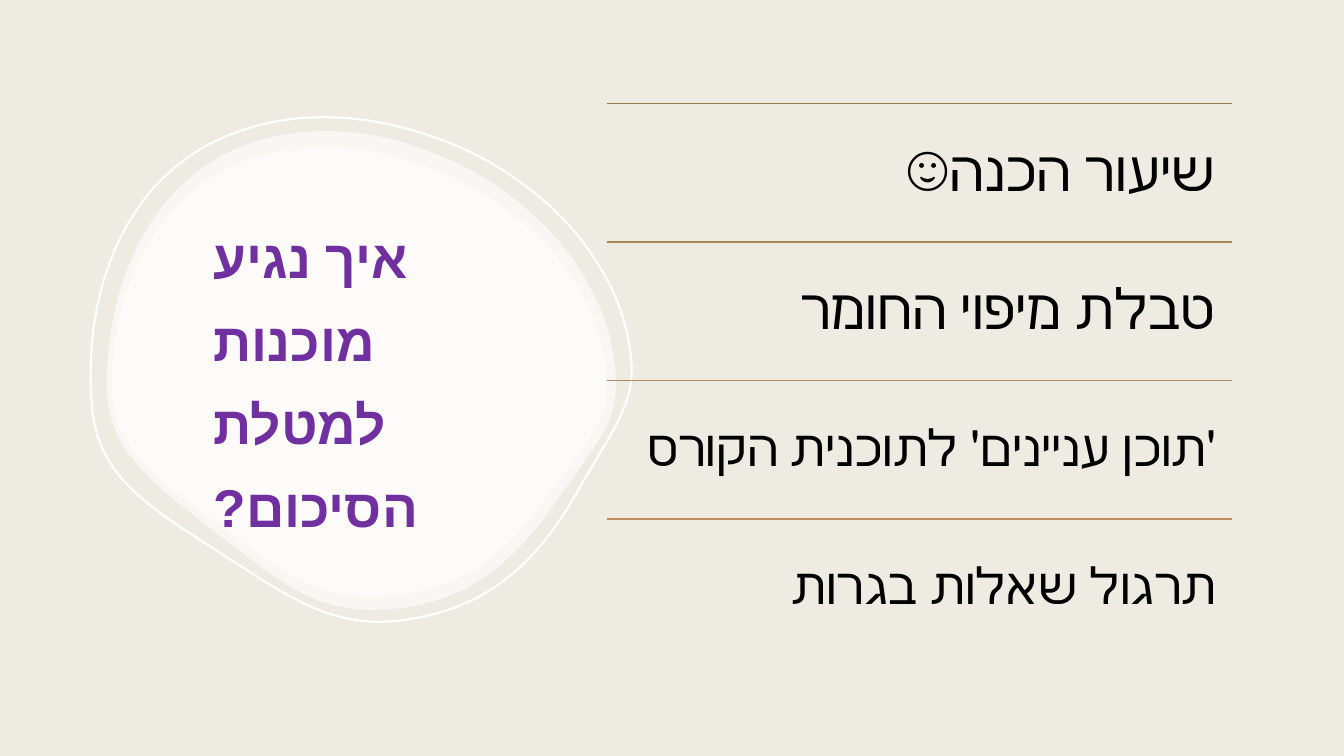
"""Build a Hebrew slide: a question on a white pebble beside four ruled topics."""
from lxml import etree
from pptx import Presentation
from pptx import util as u
from pptx.dml.color import RGBColor
from pptx.enum import shapes, text
from pptx.oxml.ns import qn

COLORS = {"background": "EEEBE2", "pebble": "FFFFFF", "question": "7030A0", "topic": "000000"}
OUTLINE_WIDTH, OUTLINE_HEIGHT = 505, 475
OUTLINE_START = (216, 0)
OUTLINE_CURVES = [
    ((183, 0), (152, 7), (125, 19)),
    ((100, 31), (77, 48), (59, 70)),
    ((21, 116), (0, 180), (0, 252)),
    ((0, 280), (8, 303), (26, 326)),
    ((45, 350), (74, 372), (104, 395)),
    ((109, 399), (115, 404), (121, 408)),
    ((172, 449), (210, 475), (261, 475)),
    ((339, 475), (395, 443), (446, 367)),
    ((453, 357), (460, 348), (466, 339)),
    ((492, 303), (505, 284), (505, 252)),
    ((505, 220), (497, 188), (481, 158)),
    ((466, 128), (444, 101), (416, 77)),
    ((389, 53), (356, 34), (322, 21)),
    ((287, 7), (251, 0), (216, 0)),
]
PEBBLES = [
    (76.3, 93.6, 363.6, 342, 0, True),
    (79.9, 105.1, 353.5, 321.1, 0, True),
    (64.1, 81.4, 386.6, 363.6, 355, False),
]
QUESTION = "איך נגיע מוכנות למטלת הסיכום?"
TOPICS = [
    ("שיעור הכנה☺", 40, 12.2, "947F53"),
    ("טבלת מיפוי החומר", 40, 12.2, "A68655"),
    ("'תוכן עניינים' לתוכנית הקורס", 36, 11, "B38A5B"),
    ("תרגול שאלות בגרות", 36, 11, "BE8D64"),
]
TOPIC_LEFT, TOPIC_TOP, TOPIC_WIDTH, TOPIC_HEIGHT = 433.5, 74.1, 446.4, 98.88


def add_hebrew(place, wording, size, font, color, align, spacing, insets):
    """Place one right-to-left paragraph in a text box."""
    box = slide.shapes.add_textbox(*map(u.Pt, place))
    frame = box.text_frame
    frame.word_wrap = True
    frame.vertical_anchor = text.MSO_ANCHOR.MIDDLE
    frame.margin_left, frame.margin_top, frame.margin_right, frame.margin_bottom = map(u.Pt, insets)
    frame.text = wording
    paragraph = frame.paragraphs[0]
    paragraph.alignment = align
    paragraph.line_spacing = spacing
    paragraph._p.get_or_add_pPr().set("rtl", "1")
    run = paragraph.runs[0]
    run.font.size = u.Pt(size)
    run.font.name = font
    run.font.color.rgb = RGBColor.from_string(color)
    return run


deck = Presentation()
deck.slide_width, deck.slide_height = u.Pt(960), u.Pt(540)
slide = deck.slides.add_slide(deck.slide_layouts[6])
slide.background.fill.solid()
slide.background.fill.fore_color.rgb = RGBColor.from_string(COLORS["background"])

for left, top, width, height, turn, filled in PEBBLES:
    across, down = u.Pt(width) / OUTLINE_WIDTH, u.Pt(height) / OUTLINE_HEIGHT
    builder = slide.shapes.build_freeform(*OUTLINE_START, scale=(across, down))
    builder.add_line_segments([curve[-1] for curve in OUTLINE_CURVES], close=True)
    pebble = builder.convert_to_shape(u.Pt(left), u.Pt(top))
    segments = list(pebble._element.iter(qn("a:lnTo")))
    for segment, curve in zip(segments, OUTLINE_CURVES):
        bend = etree.Element(qn("a:cubicBezTo"))
        for x, y in curve:
            etree.SubElement(bend, qn("a:pt"), x=str(x), y=str(y))
        segment.getparent().replace(segment, bend)
    pebble.rotation = turn
    pebble.shadow.inherit = False
    if filled:
        pebble.fill.solid()
        pebble.fill.fore_color.rgb = RGBColor.from_string(COLORS["pebble"])
        tint = pebble.fill._xPr.find(qn("a:solidFill"))[0]
        etree.SubElement(tint, qn("a:alpha"), val="60000")
        pebble.line.fill.background()
    else:
        pebble.fill.background()
        pebble.line.color.rgb = RGBColor.from_string(COLORS["pebble"])
        pebble.line.width = u.Pt(1.5)

question = add_hebrew((144, 149.8, 260.6, 231.1), QUESTION, 38, "Roboto", COLORS["question"],
                      text.PP_ALIGN.LEFT, 1.3, (8.6, 8.6, 8.6, 7.2))
question.font.bold = True
etree.SubElement(question._r.get_or_add_rPr(), qn("a:cs"), typeface="Arial")

for row, (topic, size, inset, rule_color) in enumerate(TOPICS):
    top = TOPIC_TOP + row * TOPIC_HEIGHT
    rule = slide.shapes.add_connector(shapes.MSO_CONNECTOR.STRAIGHT, u.Pt(TOPIC_LEFT), u.Pt(top),
                                      u.Pt(TOPIC_LEFT + TOPIC_WIDTH), u.Pt(top))
    rule.line.color.rgb = RGBColor.from_string(rule_color)
    rule.line.width = u.Pt(1)
    etree.SubElement(rule._element.spPr, qn("a:effectLst"))
    add_hebrew((TOPIC_LEFT, top, TOPIC_WIDTH, TOPIC_HEIGHT), topic, size, "Arial", COLORS["topic"],
               text.PP_ALIGN.RIGHT, 0.9, (inset,) * 4)

deck.save("out.pptx")
